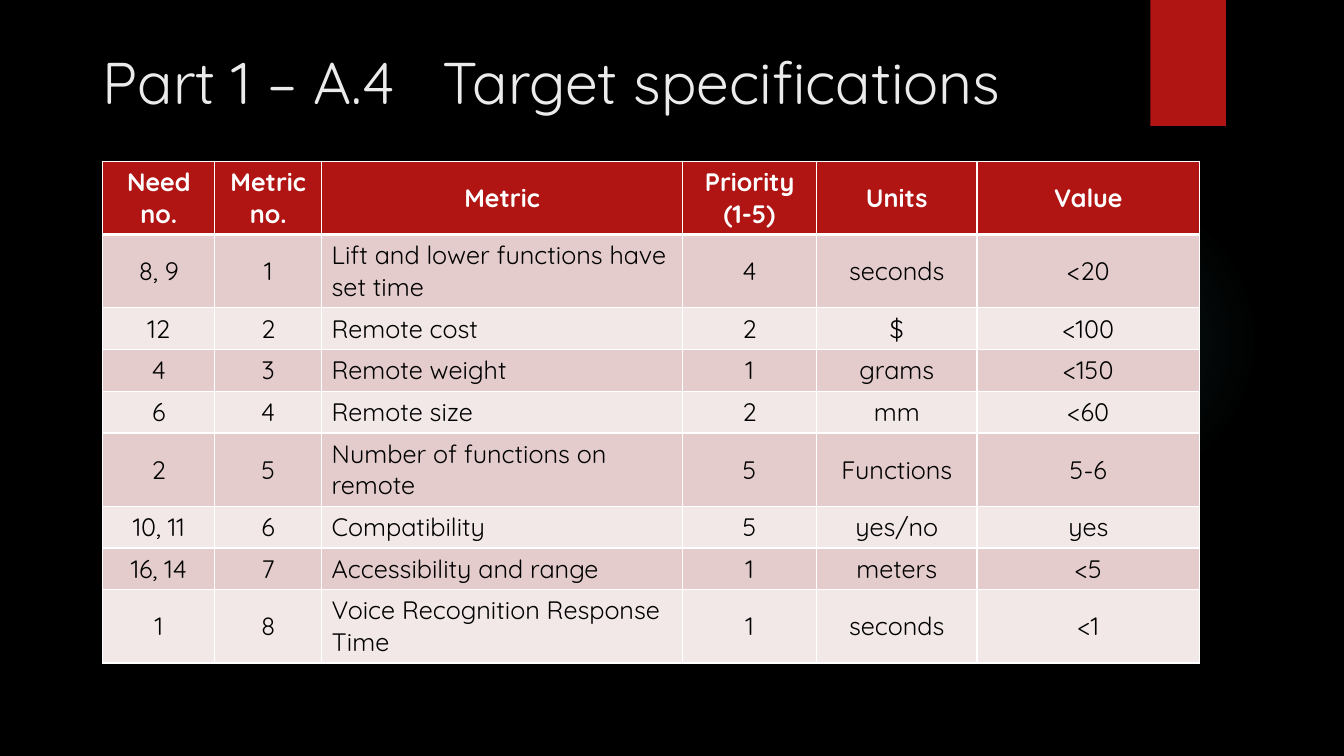
import pptx
import pptx.dml.color
import pptx.enum.shapes
import pptx.enum.text
import pptx.oxml
import pptx.oxml.ns
import pptx.util

Inches = pptx.util.Inches
Pt = pptx.util.Pt
RGBColor = pptx.dml.color.RGBColor
MSO_SHAPE = pptx.enum.shapes.MSO_SHAPE
PP_ALIGN = pptx.enum.text.PP_ALIGN
MSO_ANCHOR = pptx.enum.text.MSO_ANCHOR

BLACK = RGBColor(0x00, 0x00, 0x00)
WHITE = RGBColor(0xFF, 0xFF, 0xFF)
RED = RGBColor(0xB0, 0x15, 0x13)
TEAL = RGBColor(0x50, 0xB9, 0xC1)
TITLE_GRAY = RGBColor(0xEB, 0xEB, 0xEB)
ROSE = RGBColor(0xE4, 0xCC, 0xCC)
PALE_ROSE = RGBColor(0xF2, 0xE8, 0xE7)
FONT = "Quicksand"

GLOW_STOPS = [(0, 7), (36, 6), (69, 0)]
COLUMN_WIDTHS = [1.11, 1.06, 3.58, 1.33, 1.59, 2.21]
METRIC_COLUMN = 2
ONE_LINE, TWO_LINES = 0.41, 0.72
SPECIFICATIONS = [
    (TWO_LINES, "Need no.", "Metric no.", "Metric", "Priority (1-5)", "Units", "Value"),
    (TWO_LINES, "8, 9", "1", "Lift and lower functions have set time", "4", "seconds", "<20"),
    (ONE_LINE, "12", "2", "Remote cost", "2", "$", "<100"),
    (ONE_LINE, "4", "3", "Remote weight", "1", "grams", "<150"),
    (ONE_LINE, "6", "4", "Remote size", "2", "mm", "<60"),
    (TWO_LINES, "2", "5", "Number of functions on remote", "5", "Functions", "5-6"),
    (ONE_LINE, "10, 11", "6", "Compatibility", "5", "yes/no", "yes"),
    (ONE_LINE, "16, 14", "7", "Accessibility and range", "1", "meters", "<5"),
    (TWO_LINES, "1", "8", "Voice Recognition Response Time", "1", "seconds", "<1"),
]


def style_text(paragraph, size, color, bold=False):
    paragraph.font.name = FONT
    paragraph.font.size = Pt(size)
    paragraph.font.color.rgb = color
    paragraph.font.bold = bold


def add_plain_shape(slide, kind, left, top, width, height):
    shape = slide.shapes.add_shape(
        kind, Inches(left), Inches(top), Inches(width), Inches(height))
    shape.shadow.inherit = False
    shape.line.fill.background()
    return shape


def add_glow(slide, left, top, size):
    glow = add_plain_shape(slide, MSO_SHAPE.OVAL, left, top, size, size)
    glow.fill.background()
    stops = "".join(
        f'<a:gs pos="{position * 1000}"><a:srgbClr val="{TEAL}">'
        f'<a:alpha val="{alpha * 1000}"/></a:srgbClr></a:gs>'
        for position, alpha in GLOW_STOPS)
    gradient = pptx.oxml.parse_xml(
        f'<a:gradFill {pptx.oxml.ns.nsdecls("a")}><a:gsLst>{stops}</a:gsLst>'
        '<a:path path="circle"><a:fillToRect l="50000" t="50000" r="50000" b="50000"/>'
        '</a:path></a:gradFill>')
    properties = glow.element.spPr
    properties.replace(properties.find(pptx.oxml.ns.qn("a:noFill")), gradient)


def add_ribbon(slide, left, top, width, height):
    ribbon = add_plain_shape(slide, MSO_SHAPE.RECTANGLE, left, top, width, height)
    ribbon.fill.solid()
    ribbon.fill.fore_color.rgb = RED


def add_title(slide, left, top, width, height):
    title = slide.shapes.title
    title.left, title.top = Inches(left), Inches(top)
    title.width, title.height = Inches(width), Inches(height)
    frame = title.text_frame
    frame.text = "Part 1 – A.4   Target specifications"
    frame.word_wrap = True
    frame.auto_size = pptx.enum.text.MSO_AUTO_SIZE.NONE
    frame.vertical_anchor = MSO_ANCHOR.TOP
    frame.paragraphs[0].alignment = PP_ALIGN.LEFT
    style_text(frame.paragraphs[0], 42, TITLE_GRAY)


def set_borders(cell, top, bottom):
    properties = cell._tc.get_or_add_tcPr()
    for side, width in (("L", 1), ("R", 1), ("T", top), ("B", bottom)):
        properties.append(pptx.oxml.parse_xml(
            f'<a:ln{side} {pptx.oxml.ns.nsdecls("a")} w="{Pt(width)}"><a:solidFill>'
            f'<a:srgbClr val="{WHITE}"/></a:solidFill></a:ln{side}>'))


def add_specifications(slide, left, top, width):
    table = slide.shapes.add_table(
        len(SPECIFICATIONS), len(COLUMN_WIDTHS), Inches(left), Inches(top),
        Inches(width), Inches(sum(row[0] for row in SPECIFICATIONS))).table
    for column, share in zip(table.columns, COLUMN_WIDTHS):
        column.width = Inches(width * share / sum(COLUMN_WIDTHS))
    for row_index, (height, *values) in enumerate(SPECIFICATIONS):
        header = row_index == 0
        table.rows[row_index].height = Inches(height)
        for column_index, value in enumerate(values):
            cell = table.cell(row_index, column_index)
            set_borders(cell, 3 if row_index == 1 else 1, 3 if header else 1)
            cell.fill.solid()
            cell.fill.fore_color.rgb = (
                RED if header else ROSE if row_index % 2 else PALE_ROSE)
            cell.vertical_anchor = MSO_ANCHOR.MIDDLE
            cell.text = value
            paragraph = cell.text_frame.paragraphs[0]
            left_aligned = column_index == METRIC_COLUMN and not header
            paragraph.alignment = PP_ALIGN.LEFT if left_aligned else PP_ALIGN.CENTER
            style_text(paragraph, 18, WHITE if header else BLACK, header)


def build_specifications_slide(presentation):
    slide = presentation.slides.add_slide(presentation.slide_layouts[5])
    slide.background.fill.solid()
    slide.background.fill.fore_color.rgb = BLACK
    add_glow(slide, 9.41, 1.83, 3.08)
    add_ribbon(slide, 11.41, 0, 0.75, 1.25)
    add_title(slide, 0.92, 0.4, 11.86, 1.47)
    add_specifications(slide, 1.02, 1.6, 10.88)


def main():
    presentation = pptx.Presentation()
    presentation.slide_width = Inches(13.33)
    presentation.slide_height = Inches(7.5)
    build_specifications_slide(presentation)
    presentation.save("out.pptx")


if __name__ == "__main__":
    main()
